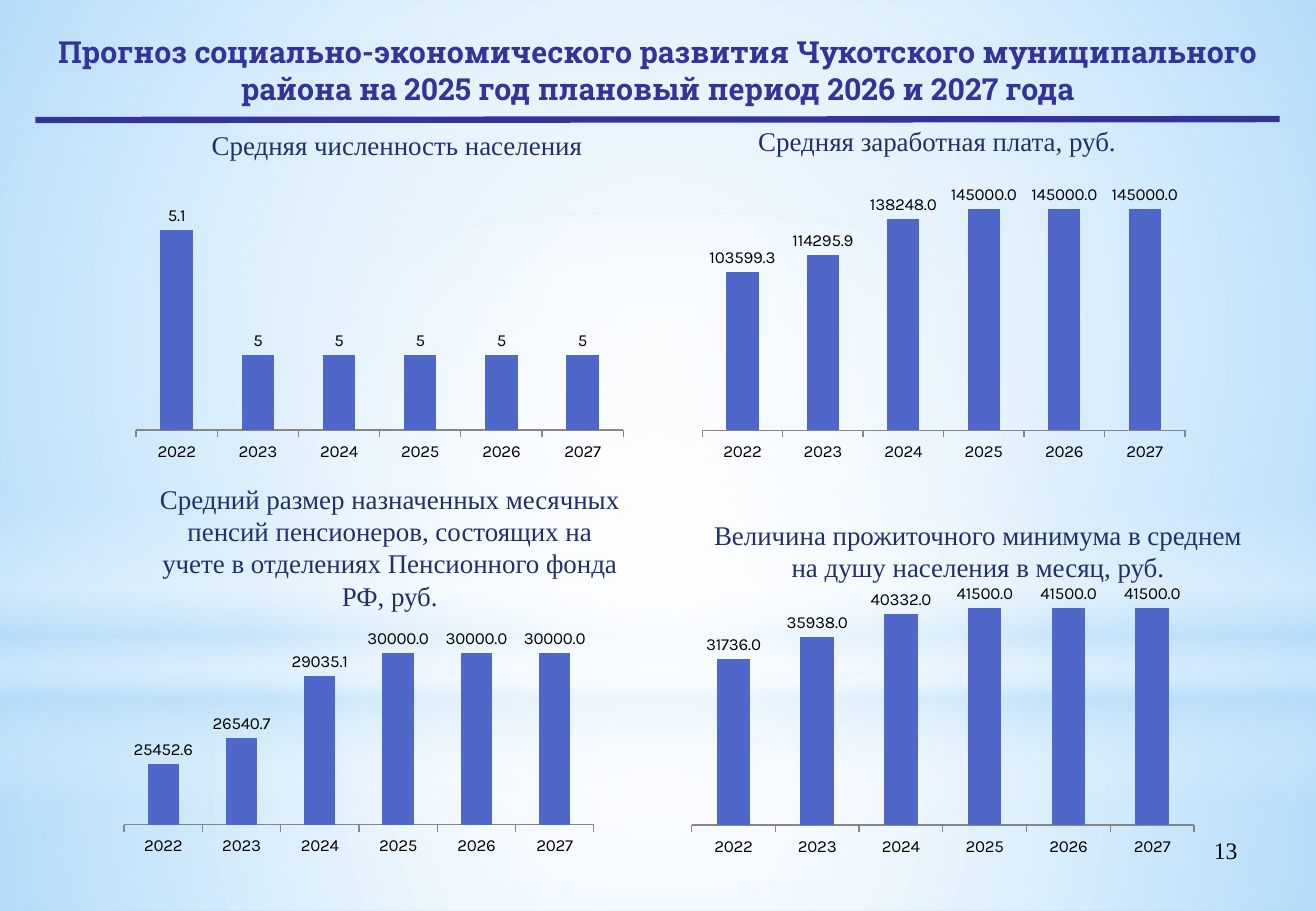
from dataclasses import dataclass

from lxml import etree
from pptx import Presentation
from pptx.chart.data import CategoryChartData
from pptx.dml.color import RGBColor
from pptx.enum.chart import XL_CHART_TYPE, XL_LABEL_POSITION, XL_TICK_MARK
from pptx.enum.shapes import MSO_CONNECTOR, MSO_SHAPE
from pptx.enum.text import MSO_ANCHOR, PP_ALIGN
from pptx.oxml.ns import qn
from pptx.util import Cm, Pt

COLUMNS = XL_CHART_TYPE.COLUMN_CLUSTERED
OUTSIDE_END = XL_LABEL_POSITION.OUTSIDE_END
TICK_OUTSIDE, TICK_NONE = XL_TICK_MARK.OUTSIDE, XL_TICK_MARK.NONE
STRAIGHT = MSO_CONNECTOR.STRAIGHT
RECTANGLE, OVAL = MSO_SHAPE.RECTANGLE, MSO_SHAPE.OVAL
TOP, MIDDLE = MSO_ANCHOR.TOP, MSO_ANCHOR.MIDDLE
CENTER, RIGHT = PP_ALIGN.CENTER, PP_ALIGN.RIGHT


@dataclass(frozen=True)
class Theme:
    sky: str = "B4DCFA"
    white: str = "FFFFFF"
    heading: str = "333399"
    caption: str = "21306A"
    black: str = "000000"
    bar: str = "4E67C8"
    axis: str = "868686"
    heading_font: str = "Roboto Slab"
    body_font: str = "Times New Roman"
    chart_font: str = "Karla"
    heading_size: int = 18
    caption_size: int = 16
    number_size: int = 14
    chart_size: int = 10


THEME = Theme()
WIDTH, HEIGHT = 27.53, 19.05
YEARS = [str(year) for year in range(2022, 2028)]

HEADING = {"name": THEME.heading_font, "size": THEME.heading_size,
           "color": THEME.heading, "bold": True}
CAPTION = {"name": THEME.body_font, "size": THEME.caption_size, "color": THEME.caption}
NUMBER = {"name": THEME.body_font, "size": THEME.number_size, "color": THEME.black}
CHART_TEXT = {"name": THEME.chart_font, "size": THEME.chart_size, "color": THEME.black}

# Gradient stops: position, colour, opacity (all in percent)
GLOWS = [
    (RECTANGLE, (0, 14.17, WIDTH, 4.88), True,
     [(0, THEME.white, 91), (37, THEME.white, 76), (100, THEME.sky, 79)]),
    (RECTANGLE, (0, 0, WIDTH, 14.17), True,
     [(0, THEME.white, 89), (48, THEME.white, 62), (100, THEME.sky, 79)]),
    (RECTANGLE, (0, 10.46, WIDTH, 6.35), False,
     [(0, THEME.white, 0), (29, THEME.white, 30), (45, THEME.sky, 40),
      (55, THEME.white, 26), (65, THEME.sky, 60), (100, THEME.white, 0)]),
    (OVAL, (0, 4.45, WIDTH, 14.17), True,
     [(0, THEME.white, 100), (56, THEME.white, 0)]),
]

# Caption, caption box, chart box, plot area share, axis limits, label format, values
INDICATORS = [
    ("Средняя численность населения",
     (3.15, 2.57, 10.31, 0.94), (2.08, 3.86, 10.97, 5.97),
     (0.07, 0.07, 0.93, 0.79), (4.94, 5.12), "General", [5.1, 5, 5, 5, 5, 5]),
    ("Средняя заработная плата, руб.",
     (14.45, 2.49, 10.31, 0.94), (14.48, 3.76, 10.52, 6.02),
     (0.02, 0.1, 0.96, 0.77), (0, 145000), "0.0",
     [103599.3, 114295.9, 138248, 145000, 145000, 145000]),
    ("Средний размер назначенных месячных пенсий пенсионеров, состоящих на "
     "учете в отделениях Пенсионного фонда РФ, руб.",
     (3, 9.96, 10.31, 3), (2.39, 13.06, 10.24, 4.93),
     (0.02, 0.12, 0.96, 0.73), (23000, 30000), "0.0",
     [25452.6, 26540.7, 29035.1, 30000, 30000, 30000]),
    ("Величина прожиточного минимума в среднем на душу населения в месяц, руб.",
     (14.35, 10.72, 12.22, 1.63), (14.25, 12.19, 10.95, 5.82),
     (0.02, 0.09, 0.96, 0.78), (0, 41500), "0.0",
     [31736, 35938, 40332, 41500, 41500, 41500]),
]


def lengths(box):
    return [Cm(value) for value in box]


def set_values(target, values):
    for name, value in values.items():
        setattr(target, name, value)


def style_font(font, style):
    set_values(font, {**{key: value for key, value in style.items() if key != "color"},
                      "size": Pt(style["size"])})
    font.color.rgb = RGBColor.from_string(style["color"])


def add_child(parent, tag, **attributes):
    return etree.SubElement(parent, qn(tag), {key: str(v) for key, v in attributes.items()})


def add_glow(page, kind, box, radial, stops):
    shape = page.shapes.add_shape(kind, *lengths(box))
    shape.shadow.inherit = False
    shape.line.fill.background()
    shape.fill.gradient()
    gradient = shape.element.spPr.find(qn("a:gradFill"))
    for child in list(gradient):
        gradient.remove(child)
    stop_list = add_child(gradient, "a:gsLst")
    for position, color, opacity in stops:
        stop = add_child(stop_list, "a:gs", pos=position * 1000)
        add_child(add_child(stop, "a:srgbClr", val=color), "a:alpha", val=opacity * 1000)
    if radial:
        center = add_child(gradient, "a:path", path="circle")
        add_child(center, "a:fillToRect", **dict.fromkeys("ltrb", 50000))
    else:
        add_child(gradient, "a:lin", ang=90 * 60000, scaled=0)


def add_text(page, text, box, style, align=CENTER, anchor=TOP):
    frame = page.shapes.add_textbox(*lengths(box)).text_frame
    set_values(frame, {"word_wrap": True, "vertical_anchor": anchor})
    para = frame.paragraphs[0]
    para.alignment = align
    span = para.add_run()
    span.text = text
    style_font(span.font, style)


def add_rule(page, start, end):
    rule = page.shapes.add_connector(STRAIGHT, *lengths(start + end))
    rule.line.color.rgb = RGBColor.from_string(THEME.heading)
    rule.line.width = Pt(3.75)
    add_child(rule.element.spPr, "a:effectLst")


def place_plot(chart, area):
    plot_area = chart.element.find(".//" + qn("c:plotArea"))
    for old in plot_area.findall(qn("c:layout")):
        plot_area.remove(old)
    layout = etree.Element(qn("c:layout"))
    plot_area.insert(0, layout)
    manual = add_child(layout, "c:manualLayout")
    add_child(manual, "c:layoutTarget", val="inner")
    for tag in ("c:xMode", "c:yMode"):
        add_child(manual, tag, val="edge")
    for tag, value in zip("xywh", area):
        add_child(manual, "c:" + tag, val=value)


def add_column_chart(page, name, box, area, limits, number_format, values):
    data = CategoryChartData()
    data.categories = YEARS
    data.add_series(name, values)
    chart = page.shapes.add_chart(COLUMNS, *lengths(box), data).chart
    set_values(chart, {"has_title": False, "has_legend": False})
    style_font(chart.font, CHART_TEXT)
    place_plot(chart, area)

    # Axes
    set_values(chart.value_axis, {"visible": False, "has_major_gridlines": False,
                                  "minimum_scale": limits[0], "maximum_scale": limits[1]})
    set_values(chart.category_axis, {"major_tick_mark": TICK_OUTSIDE,
                                     "minor_tick_mark": TICK_NONE})
    chart.category_axis.format.line.color.rgb = RGBColor.from_string(THEME.axis)

    # Bars and their labels
    plot = chart.plots[0]
    set_values(plot, {"gap_width": 150, "vary_by_categories": False,
                      "has_data_labels": True})
    set_values(plot.data_labels, {"show_value": True, "position": OUTSIDE_END,
                                  "number_format": number_format,
                                  "number_format_is_linked": False})
    style_font(plot.data_labels.font, CHART_TEXT)
    fill = plot.series[0].format.fill
    fill.solid()
    fill.fore_color.rgb = RGBColor.from_string(THEME.bar)


def main():
    deck = Presentation()
    set_values(deck, {"slide_width": Cm(WIDTH), "slide_height": Cm(HEIGHT)})
    page = deck.slides.add_slide(deck.slide_layouts[6])

    # Background
    page.background.fill.solid()
    page.background.fill.fore_color.rgb = RGBColor.from_string(THEME.sky)
    for glow in GLOWS:
        add_glow(page, *glow)

    # Heading and page number
    add_text(page, "Прогноз социально-экономического развития Чукотского муниципального "
             "района на 2025 год плановый период 2026 и 2027 года",
             (0.33, 0.05, 26.87, 2.82), HEADING, anchor=MIDDLE)
    add_text(page, "13", (19.71, 17.35, 6.43, 1.32), NUMBER, align=RIGHT)

    # Indicators
    for caption, caption_box, *chart_parts in INDICATORS:
        add_text(page, caption, caption_box, CAPTION)
        add_column_chart(page, caption, *chart_parts)

    add_rule(page, (0.74, 2.51), (26.77, 2.49))
    deck.save("out.pptx")


if __name__ == "__main__":
    main()
